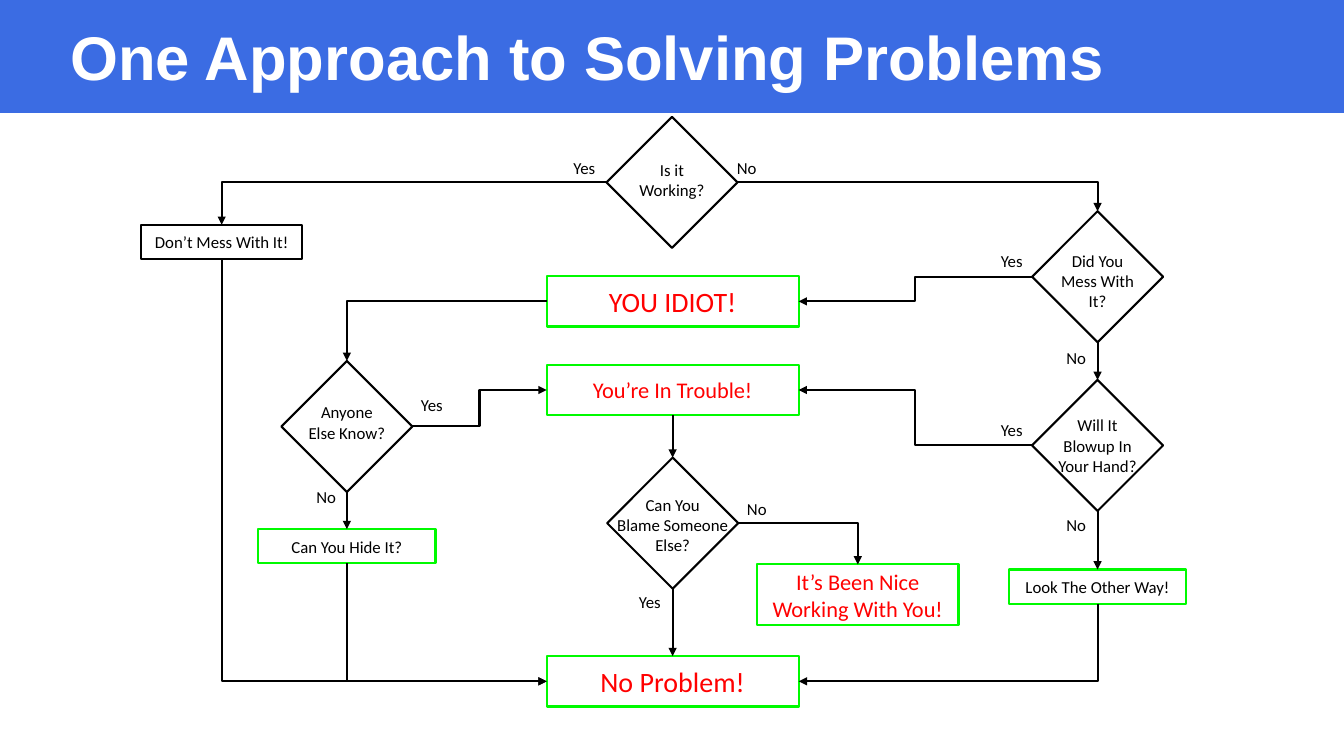
from lxml import etree
from pptx import Presentation
from pptx import util as u
from pptx.dml.color import RGBColor
from pptx.enum import shapes, text
from pptx.oxml.ns import qn

BLUE = RGBColor(0x3B, 0x6C, 0xE3)
GREEN = RGBColor(0x00, 0xFA, 0x00)
RED = RGBColor(0xFF, 0x00, 0x00)
BLACK = RGBColor(0x00, 0x00, 0x00)
WHITE = RGBColor(0xFF, 0xFF, 0xFF)

LEFT, CENTER = text.PP_ALIGN.LEFT, text.PP_ALIGN.CENTER
TOP, MIDDLE = text.MSO_ANCHOR.TOP, text.MSO_ANCHOR.MIDDLE
RECT, DIAMOND = shapes.MSO_SHAPE.RECTANGLE, shapes.MSO_SHAPE.DIAMOND
STRAIGHT, ELBOW = shapes.MSO_CONNECTOR.STRAIGHT, shapes.MSO_CONNECTOR.ELBOW

# Column centres of the flowchart
FAR_LEFT, MID_LEFT, MID, RIGHT_COL = 158.4, 247.8, 480.5, 784


class FlowSlide:
    line_width = 1.5
    side = 93.6

    def __init__(self, prs):
        self.shapes = prs.slides.add_slide(prs.slide_layouts[6]).shapes

    def set_text(self, sp, words, align=CENTER, anchor=TOP, wrap=False, spacing=None, **font):
        tf = sp.text_frame
        tf.text = words
        tf.word_wrap, tf.vertical_anchor = wrap, anchor
        style = {"name": "Calibri", "size": u.Pt(12), "bold": False, **font}
        color = style.pop("color", BLACK)
        for p in tf.paragraphs:
            p.alignment, p.line_spacing = align, spacing
            for r in p.runs:
                r.font.color.rgb = color
                for key, value in style.items():
                    setattr(r.font, key, value)

    def textbox(self, words, x, y, w, h, **style):
        sp = self.shapes.add_textbox(u.Pt(x), u.Pt(y), u.Pt(w), u.Pt(h))
        self.set_text(sp, words, **style)

    def shape(self, kind, x, y, w, h, fill=None, line=None):
        sp = self.shapes.add_shape(kind, u.Pt(x), u.Pt(y), u.Pt(w), u.Pt(h))
        sp.shadow.inherit = False
        if fill is None:
            sp.fill.background()
        else:
            sp.fill.solid()
            sp.fill.fore_color.rgb = fill
        if line is None:
            sp.line.fill.background()
        else:
            sp.line.color.rgb = line
            sp.line.width = u.Pt(self.line_width)
        return sp

    def box(self, words, cx, y, w, h, line=GREEN, size=12, color=BLACK):
        sp = self.shape(RECT, cx - w / 2, y, w, h, line=line)
        self.set_text(sp, words, anchor=MIDDLE, wrap=True, size=u.Pt(size), color=color)
        return sp

    def question(self, words, cx, y, text_y):
        x = cx - self.side / 2
        sp = self.shape(DIAMOND, x, y, self.side, self.side, line=BLACK)
        self.textbox(words, x, text_y, self.side, 22 * (words.count("\n") + 1))
        return sp

    def answer(self, words, x, y):
        self.textbox(words, x, y, 30, 21.6, align=LEFT)

    def arrow(self, start, out, end, into):
        """Join two sides (l, r, t or b); an elbow leaves and arrives square to them."""
        x1, y1 = side_point(start, out)
        x2, y2 = side_point(end, into)
        across, arrives_across = out in "lr", into in "lr"
        turn = None
        if not across and arrives_across:
            # A quarter turn makes a one-bend elbow run vertically first
            turn = 270 if x2 > x1 else 90
            cx, cy = (x1 + x2) // 2, (y1 + y2) // 2
            w, h = abs(y2 - y1) // 2, abs(x2 - x1) // 2
            flip = -1 if turn == 270 else 1
            x1, y1, x2, y2 = cx - flip * w, cy - h, cx + flip * w, cy + h
        kind = ELBOW if across or arrives_across else STRAIGHT
        c = self.shapes.add_connector(kind, x1, y1, x2, y2)
        sppr = c._element.spPr
        if across != arrives_across:
            sppr.find(qn("a:prstGeom")).set("prst", "bentConnector2")
        if turn:
            sppr.find(qn("a:xfrm")).set("rot", str(turn * 60000))
        c.line.color.rgb = BLACK
        c.line.width = u.Pt(self.line_width)
        etree.SubElement(sppr.find(qn("a:ln")), qn("a:tailEnd"), type="triangle")
        etree.SubElement(sppr, qn("a:effectLst"))


def side_point(sp, side):
    dx, dy = {"l": (0, 1), "r": (2, 1), "t": (1, 0), "b": (1, 2)}[side]
    return sp.left + sp.width * dx // 2, sp.top + sp.height * dy // 2


def main():
    prs = Presentation()
    prs.slide_width, prs.slide_height = u.Pt(960), u.Pt(540)
    s = FlowSlide(prs)

    s.shape(RECT, 0, 0, 960, 80.7, fill=BLUE)
    s.textbox("One Approach to Solving Problems", 43.2, 14.8, 767.5, 57.6, align=LEFT,
              anchor=MIDDLE, wrap=True, spacing=0.9, name="Arial", size=u.Pt(44),
              bold=True, color=WHITE)

    working = s.question("Is it\nWorking?", MID - 0.5, 83.5, 110.2)
    messed = s.question("Did You\nMess With\nIt?", RIGHT_COL, 150.9, 175.7)
    blowup = s.question("Will It\nBlowup In\nYour Hand?", RIGHT_COL, 271.4, 293)
    known = s.question("Anyone\nElse Know?", MID_LEFT, 257.8, 283.7)
    blame = s.question("Can You\nBlame Someone\nElse?", MID, 326.9, 349.8)

    leave = s.box("Don’t Mess With It!", FAR_LEFT, 160.6, 115.2, 24.5, line=BLACK)
    hide = s.box("Can You Hide It?", MID_LEFT, 378, 126.7, 24.5)
    look_away = s.box("Look The Other Way!", RIGHT_COL, 406.8, 126.7, 24.5)
    idiot = s.box("YOU IDIOT!", MID, 197.3, 180, 36, size=20, color=RED)
    trouble = s.box("You’re In Trouble!", MID, 260.6, 180, 36, size=16, color=RED)
    no_problem = s.box("No Problem!", MID, 468.7, 180, 36, size=20, color=RED)
    farewell = s.box("It’s Been Nice Working With You!", 612.7, 403.2, 144, 43.2,
                     size=16, color=RED)

    for start, out, end, into in (
        (working, "l", leave, "t"),
        (working, "r", messed, "t"),
        (messed, "l", idiot, "r"),
        (messed, "b", blowup, "t"),
        (blowup, "l", trouble, "r"),
        (blowup, "b", look_away, "t"),
        (idiot, "l", known, "t"),
        (known, "r", trouble, "l"),
        (known, "b", hide, "t"),
        (trouble, "b", blame, "t"),
        (blame, "r", farewell, "t"),
        (blame, "b", no_problem, "t"),
        (leave, "b", no_problem, "l"),
        (hide, "b", no_problem, "l"),
        (look_away, "b", no_problem, "r"),
    ):
        s.arrow(start, out, end, into)

    answers = {
        "Yes": [(402.5, 108.9), (707.8, 175.7), (707.8, 296.6), (293.6, 278.6), (449.3, 419.3)],
        "No": [(519.3, 108.9), (754.6, 244.6), (754.6, 364.3), (526.5, 352.8), (218.9, 344.2)],
    }
    for words, places in answers.items():
        for x, y in places:
            s.answer(words, x, y)

    prs.save("out.pptx")


if __name__ == "__main__":
    main()
